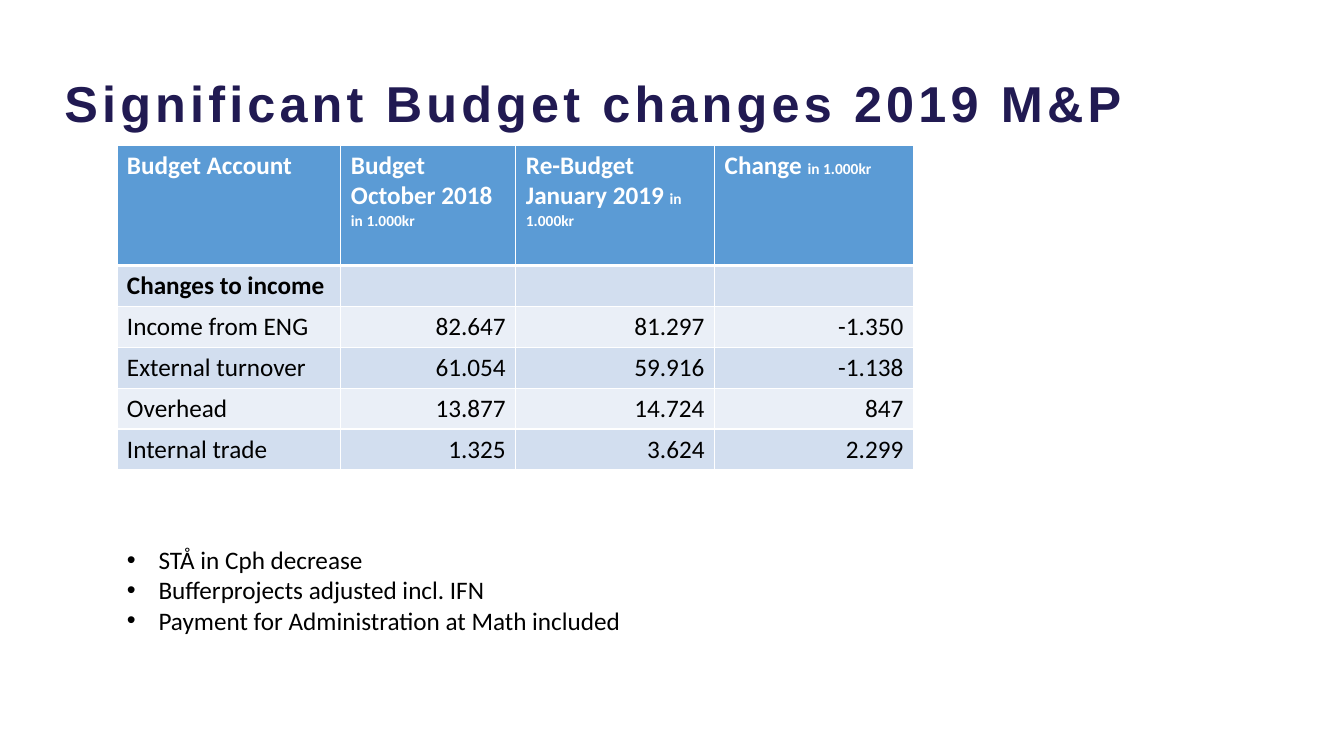
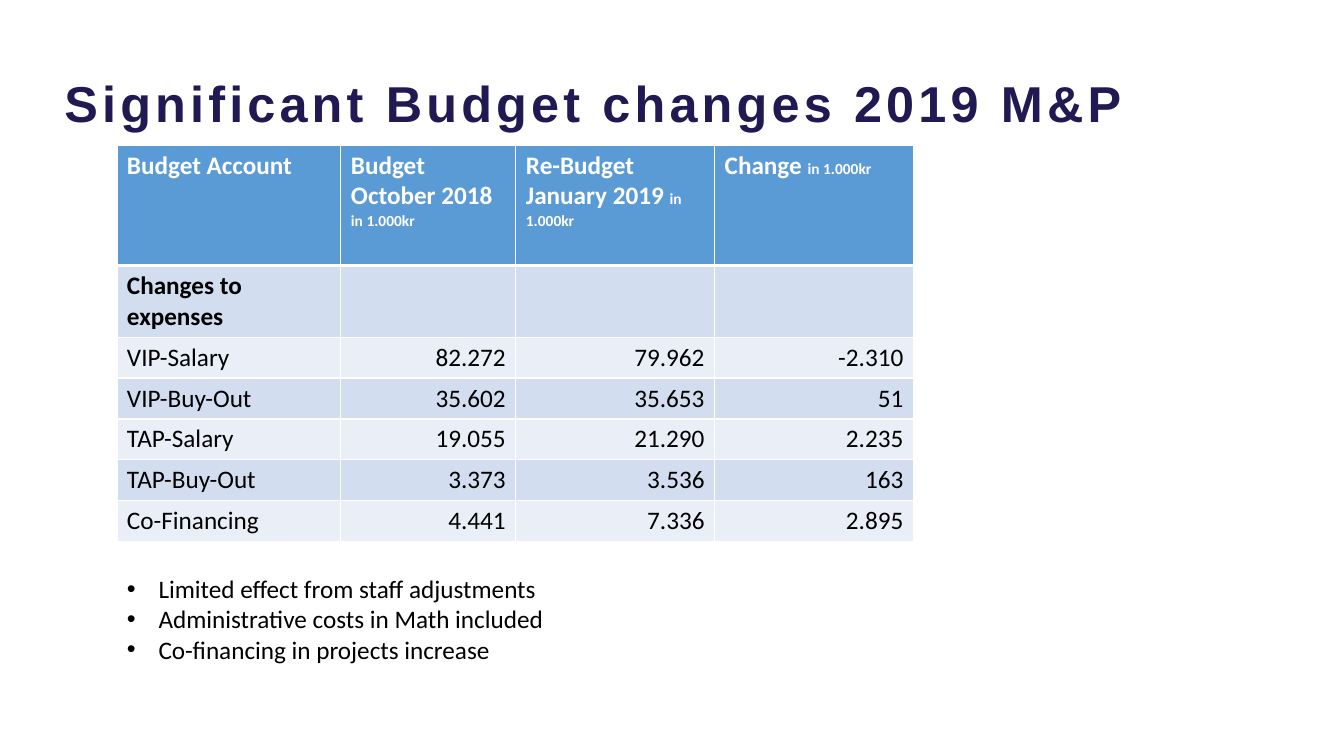
"""Build two slides of budget changes, each with a table and its explanations."""
from dataclasses import dataclass

from lxml.etree import SubElement
from pptx import Presentation
from pptx.dml.color import RGBColor as RGB
from pptx.enum.text import MSO_ANCHOR as ANCHOR, MSO_AUTO_SIZE as AUTO, PP_ALIGN as ALIGN
from pptx.oxml.ns import qn
from pptx.util import Pt


@dataclass(frozen=True)
class Theme:
    navy: RGB = RGB.from_string("211A52")
    blue: RGB = RGB.from_string("5B9BD5")
    bands: tuple = (RGB.from_string("EAEFF7"), RGB.from_string("D2DEEF"))
    white: RGB = RGB.from_string("FFFFFF")
    black: RGB = RGB.from_string("000000")
    heading: str = "Arial"
    body: str = "Calibri"
    title_size: int = 36
    text_size: int = 18
    unit_size: int = 11


T = Theme()
TITLE = "Significant Budget changes 2019 M&P"
UNIT = "in 1.000kr"
HEADER = [("Budget Account", ""), ("Budget October 2018 ", UNIT),
          ("Re-Budget January 2019 ", UNIT), ("Change ", UNIT)]
COL_WIDTHS = [160, 125, 142, 142]
HEADER_HEIGHT, ROW_HEIGHT = 86, 29.2
TABLE_LEFT, TABLE_TOP, TABLE_WIDTH = 83.5, 103.7, sum(COL_WIDTHS)
INDENT = 22.5

SLIDES = [
    {
        "rows": [
            ("Changes to income", "", "", ""),
            ("Income from ENG", "82.647", "81.297", "-1.350"),
            ("External turnover", "61.054", "59.916", "-1.138"),
            ("Overhead", "13.877", "14.724", "847"),
            ("Internal trade", "1.325", "3.624", "2.299"),
        ],
        "notes_top": 385.2,
        "bullets": ["STÅ in Cph decrease", "Bufferprojects adjusted incl. IFN",
                    "Payment for Administration at Math included"],
    },
    {
        "rows": [
            ("Changes to expenses", "", "", ""),
            ("VIP-Salary", "82.272", "79.962", "-2.310"),
            ("VIP-Buy-Out", "35.602", "35.653", "51"),
            ("TAP-Salary", "19.055", "21.290", "2.235"),
            ("TAP-Buy-Out", "3.373", "3.536", "163"),
            ("Co-Financing", "4.441", "7.336", "2.895"),
        ],
        "notes_top": 406,
        "bullets": ["Limited effect from staff adjustments",
                    "Administrative costs in Math included",
                    "Co-financing in projects increase"],
    },
]


def add_run(p, text, color=T.black, size=T.text_size, name=T.body, bold=False):
    r = p.add_run()
    r.text = text
    for key, value in {"size": Pt(size), "name": name, "bold": bold}.items():
        setattr(r.font, key, value)
    r.font.color.rgb = color
    return r


def format_cell(cell, fill, top=1, bottom=1):
    tcPr = cell._tc.get_or_add_tcPr()
    for side, width in {"L": 1, "R": 1, "T": top, "B": bottom}.items():
        ln = SubElement(tcPr, qn(f"a:ln{side}"), w=str(Pt(width)))
        SubElement(SubElement(ln, qn("a:solidFill")), qn("a:srgbClr"), val=str(T.white))
    cell.fill.solid()
    cell.fill.fore_color.rgb = fill


prs = Presentation()
prs.slide_width, prs.slide_height = Pt(960), Pt(540)

for content in SLIDES:
    s = prs.slides.add_slide(prs.slide_layouts[1])
    title, notes = s.placeholders
    boxes = [
        (title, {"left": 46, "top": 32.4, "width": 800, "height": 56.2}),
        (notes, {"left": TABLE_LEFT, "top": content["notes_top"],
                 "width": TABLE_WIDTH, "height": 72.7}),
    ]
    for sp, box in boxes:
        for key, value in box.items():
            setattr(sp, key, Pt(value))
        for key, value in {"auto_size": AUTO.NONE, "word_wrap": True,
                           "vertical_anchor": ANCHOR.TOP}.items():
            setattr(sp.text_frame, key, value)

    tf = title.text_frame
    for key, value in {"left": 0, "top": 19, "right": 0, "bottom": 0}.items():
        setattr(tf, f"margin_{key}", Pt(value))
    p = tf.paragraphs[0]
    p.alignment = ALIGN.LEFT
    r = add_run(p, TITLE, T.navy, T.title_size, T.heading, True)
    r.font._element.set("spc", "300")

    rows = content["rows"]
    table = s.shapes.add_table(
        len(rows) + 1, len(HEADER), Pt(TABLE_LEFT), Pt(TABLE_TOP), Pt(TABLE_WIDTH),
        Pt(HEADER_HEIGHT + ROW_HEIGHT * len(rows))).table
    for col, width in zip(table.columns, COL_WIDTHS):
        col.width = Pt(width)
    for i, row in enumerate(table.rows):
        row.height = Pt(ROW_HEIGHT if i else HEADER_HEIGHT)

    for j, (label, unit) in enumerate(HEADER):
        cell = table.cell(0, j)
        format_cell(cell, T.blue, bottom=3)
        p = cell.text_frame.paragraphs[0]
        add_run(p, label, T.white, bold=True)
        if unit:
            add_run(p, unit, T.white, T.unit_size, bold=True)

    for i, values in enumerate(rows, 1):
        for j, value in enumerate(values):
            cell = table.cell(i, j)
            format_cell(cell, T.bands[i % 2], top=3 if i == 1 else 1)
            if value:
                p = cell.text_frame.paragraphs[0]
                p.alignment = ALIGN.RIGHT if j else ALIGN.LEFT
                add_run(p, value, bold=i == 1)

    tf = notes.text_frame
    for i, text in enumerate(content["bullets"]):
        p = tf.add_paragraph() if i else tf.paragraphs[0]
        p.space_before = Pt(0)
        pPr = p._p.get_or_add_pPr()
        for key, value in {"marL": INDENT, "indent": -INDENT}.items():
            pPr.set(key, str(Pt(value)))
        SubElement(pPr, qn("a:buFont"), typeface=T.heading)
        SubElement(pPr, qn("a:buChar"), char="•")
        add_run(p, text)

prs.save("out.pptx")
